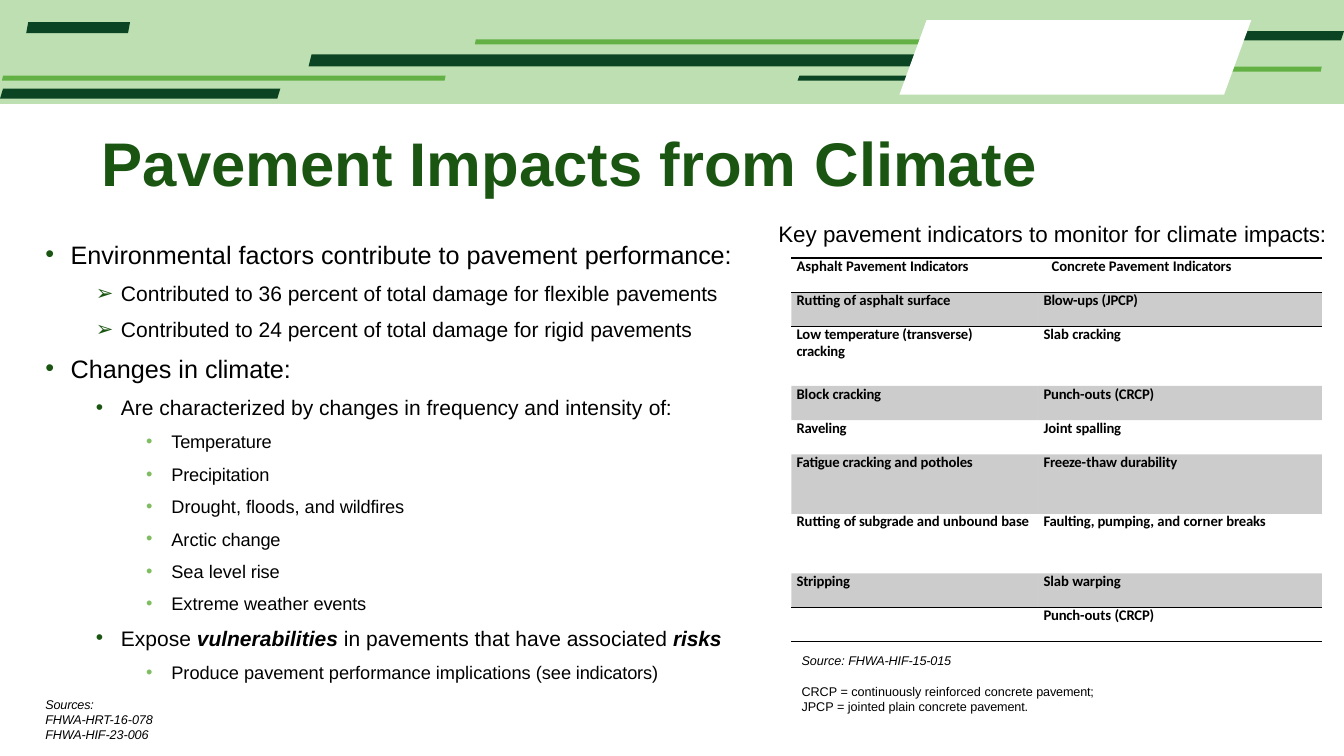
from dataclasses import dataclass
from pptx import Presentation
from pptx.dml.color import RGBColor
from pptx.enum.text import MSO_ANCHOR, MSO_AUTO_SIZE, PP_ALIGN
from pptx.oxml import parse_xml
from pptx.oxml.ns import nsdecls, qn
from pptx.util import Inches, Pt


@dataclass(frozen=True)
class Theme:
    ink: str = "000000"
    white: str = "FFFFFF"
    title: str = "1A5612"
    pale: str = "BDDFB1"
    dark: str = "0A4422"
    mid: str = "63B045"
    light: str = "7EBE60"
    font: str = "Arial"
    grid: str = "Calibri"
    head: float = 44
    lead: float = 16
    cell: float = 10.5
    note: float = 9
    levels: tuple = (18, 15, 13)


T = Theme()

# Colour of each banner shape, then left, right, top, bottom, slant of its bars
BARS = [
    (T.pale, [(0, 13.33, 0, 1.03, 0)]),
    (T.dark, [(10.39, 13.33, 0.31, 0.4, 0.03)]),
    (T.mid, [(4.71, 9.14, 0.39, 0.44, 0.01), (10.16, 13.11, 0.66, 0.71, 0.01)]),
    (T.dark, [(7.91, 9, 0.75, 0.8, 0.02), (3.06, 9.11, 0.54, 0.66, 0.03)]),
    (T.white, [(8.92, 12.41, 0.2, 0.94, 0.27)]),
    (T.mid, [(0.02, 4.42, 0.75, 0.8, 0.01)]),
    (T.dark, [(0.26, 1.29, 0.22, 0.33, 0.02), (0, 2.78, 0.88, 0.98, 0.03)]),
]

# In all texts "|" switches tight spacing on or off, "*" marks bold italic
# Level, bullet, space before, text
POINTS = [
    (0, "•", 0, "Environmental factors contribute to pavement |performance:"),
    (1, "➢", 8.2, "Contributed to 36 percent of total damage for flexible |pavements"),
    (1, "➢", 7.8, "Contributed to 24 percent of total damage for rigid |pavements"),
    (0, "•", 7.8, "Changes in |climate:"),
    (1, "•", 8.2, "Are characterized by changes in frequency and intensity |of:"),
    (2, "•", 7.8, "|Temperature"),
    (2, "•", 7.5, "|Precipitation"),
    (2, "•", 7.5, "Drought, floods, and |wildfires"),
    (2, "•", 7.5, "Arctic |change"),
    (2, "•", 7.5, "Sea level| rise"),
    (2, "•", 7.6, "Extreme weather |events"),
    (1, "•", 7.6, "Expose ||*vulnerabilities ||in pavements that have associated |*risks"),
    (2, "•", 7.8, "Produce pavement performance implications (see |indicators)"),
]

# Row height, ruled sides, asphalt lines, concrete text
ROWS = [
    (0.34, "TB", ["Asphalt Pavement |Indicators"], "Concrete Pavement |Indicators"),
    (0.34, "T", ["Rutting of asphalt |surface"], "|Blow-ups (JPCP)"),
    (0.59, "", ["Low |temperature (transverse)", "|cracking"], "Slab |cracking"),
    (0.34, "", ["Block |cracking"], "|Punch-|outs |(CRCP)"),
    (0.34, "", ["|Raveling"], "Joint |spalling"),
    (0.59, "", ["|Fatigue cracking |and |potholes"], "|Freeze-|thaw |durability"),
    (0.59, "", ["Rutting |of subgrade |and unbound |base"],
     "|Faulting, pumping, |and corner |breaks"),
    (0.34, "B", ["|Stripping"], "Slab |warping"),
    (0.34, "TB", [], "|Punch-|outs |(CRCP)"),
]


def paint(fill, color):
    fill.solid()
    fill.fore_color.rgb = RGBColor.from_string(color)


def write(par, text, size, color=T.ink, font=T.font, bold=False, slope=False):
    for i, part in enumerate(text.split("|")):
        if not part:
            continue
        run = par.add_run()
        strong = part.startswith("*")
        run.text = part.lstrip("*")
        run.font.name, run.font.size = font, Pt(size)
        run.font.bold, run.font.italic = bold or strong, slope or strong
        run.font.color.rgb = RGBColor.from_string(color)
        if i % 2:
            run.font._element.set("spc", "-10")


def place(shape, left, top, width, height, inset=0.01):
    shape.left, shape.top = Inches(left), Inches(top)
    shape.width, shape.height = Inches(width), Inches(height)
    frame = shape.text_frame
    frame.word_wrap = True
    frame.auto_size = MSO_AUTO_SIZE.NONE
    frame.vertical_anchor = MSO_ANCHOR.TOP
    frame.margin_left = frame.margin_right = frame.margin_bottom = 0
    frame.margin_top = Inches(inset)
    return frame


def add_par(frame, first, gap=0):
    par = frame.paragraphs[0] if first else frame.add_paragraph()
    par.alignment = PP_ALIGN.LEFT
    par.space_before = Pt(gap)
    return par


def add_bars(slide, color, bars):
    path = None
    for left, right, top, bottom, slant in bars:
        spots = [(left + slant, top), (right, top), (right - slant, bottom), (left, bottom)]
        spots = [(Inches(x), Inches(y)) for x, y in spots]
        if path is None:
            path = slide.shapes.build_freeform(*spots[0], scale=1.0)
        else:
            path.move_to(*spots[0])
        path.add_line_segments(spots[1:], close=True)
    shape = path.convert_to_shape()
    shape.shadow.inherit = False
    paint(shape.fill, color)
    shape.line.fill.background()


def add_note(slide, box, lines, size=T.note):
    """Each line is its space before, its text and whether it is italic."""
    frame = place(slide.shapes.add_textbox(0, 0, 0, 0), *box)
    frame.margin_left = Inches(0.01)
    for i, (gap, text, slope) in enumerate(lines):
        write(add_par(frame, i == 0, gap), text, size, slope=slope)


def add_list(frame):
    for i, (level, mark, gap, text) in enumerate(POINTS):
        par = add_par(frame, i == 0, gap)
        par.level = level
        props = par._p.get_or_add_pPr()
        props.set("marL", str(Inches(0.26 + 0.5 * level)))
        props.set("indent", str(Inches(-0.25)))
        color = T.light if level == 2 else T.title
        for xml in (
            f'<a:buClr {nsdecls("a")}><a:srgbClr val="{color}"/></a:buClr>',
            f'<a:buFont {nsdecls("a")} typeface="{T.font}"/>',
            f'<a:buChar {nsdecls("a")} char="{mark}"/>',
        ):
            props.append(parse_xml(xml))
        write(par, text, T.levels[level])


def add_rule(cell, side):
    cell._tc.get_or_add_tcPr().append(parse_xml(
        f'<a:ln{side} {nsdecls("a")} w="12700"><a:solidFill>'
        f'<a:srgbClr val="{T.ink}"/></a:solidFill></a:ln{side}>'))


def fill_cell(cell, sides, shade, lines, indent):
    cell.margin_left = Inches(indent)
    cell.margin_right = cell.margin_top = cell.margin_bottom = 0
    for side in sides:
        add_rule(cell, side)
    if shade:
        paint(cell.fill, T.ink)
        tint = cell._tc.tcPr.find(qn("a:solidFill"))[0]
        tint.append(parse_xml(f'<a:alpha {nsdecls("a")} val="20000"/>'))
    else:
        cell.fill.background()
    for i, text in enumerate(lines):
        par = add_par(cell.text_frame, i == 0)
        par.line_spacing = Pt(12.1)
        write(par, text, T.cell, font=T.grid, bold=True)


def add_grid(slide):
    frame = slide.shapes.add_table(len(ROWS), 2, Inches(7.85), Inches(2.56),
                                   Inches(5.26), Inches(3.81))
    table = frame.table
    table.first_row = table.horz_banding = False
    for style in frame.element.iter(qn("a:tableStyleId")):
        style.text = "{2D5ABB26-0587-4C30-8999-92F81FD0307C}"
    for col, width in zip(table.columns, (2.44, 2.82)):
        col.width = Inches(width)
    for row, (height, sides, asphalt, concrete) in enumerate(ROWS):
        table.rows[row].height = Inches(height)
        fill_cell(table.cell(row, 0), sides, row % 2, asphalt, 0.05)
        fill_cell(table.cell(row, 1), sides, row % 2, [concrete], 0.06 if row else 0.14)


def main():
    deck = Presentation()
    deck.slide_width, deck.slide_height = Inches(13.33), Inches(7.5)
    slide = deck.slides.add_slide(deck.slide_layouts[1])

    # Banner
    for color, bars in BARS:
        add_bars(slide, color, bars)

    # Title and list
    frame = place(slide.shapes.title, 1, 1.23, 11.54, 0.69)
    frame.margin_left = Inches(0.01)
    write(add_par(frame, True), "Pavement Impacts from |Climate", T.head, T.title, bold=True)
    add_list(place(slide.placeholders[1], 0.44, 2.22, 6.84, 4.57, 0.15))

    # Indicators
    add_note(slide, (7.71, 2.17, 5.49, 0.29),
             [(0, "Key pavement indicators to monitor for climate |impacts:", False)], T.lead)
    add_grid(slide)

    # Sources
    add_note(slide, (7.94, 6.47, 2.94, 0.63), [
        (0, "Source: |FHWA-HIF-15-015", True),
        (11, "CRCP = continuously reinforced concrete |pavement;", False),
        (0, "JPCP = jointed plain concrete |pavement.", False)])
    add_note(slide, (0.44, 6.9, 1.13, 0.48), [
        (0, "|Sources:", True),
        (0, "|FHWA-HRT-|16-|078", True),
        (0, "|FHWA-HIF-|23-|006", True)])
    deck.save("out.pptx")


if __name__ == "__main__":
    main()
